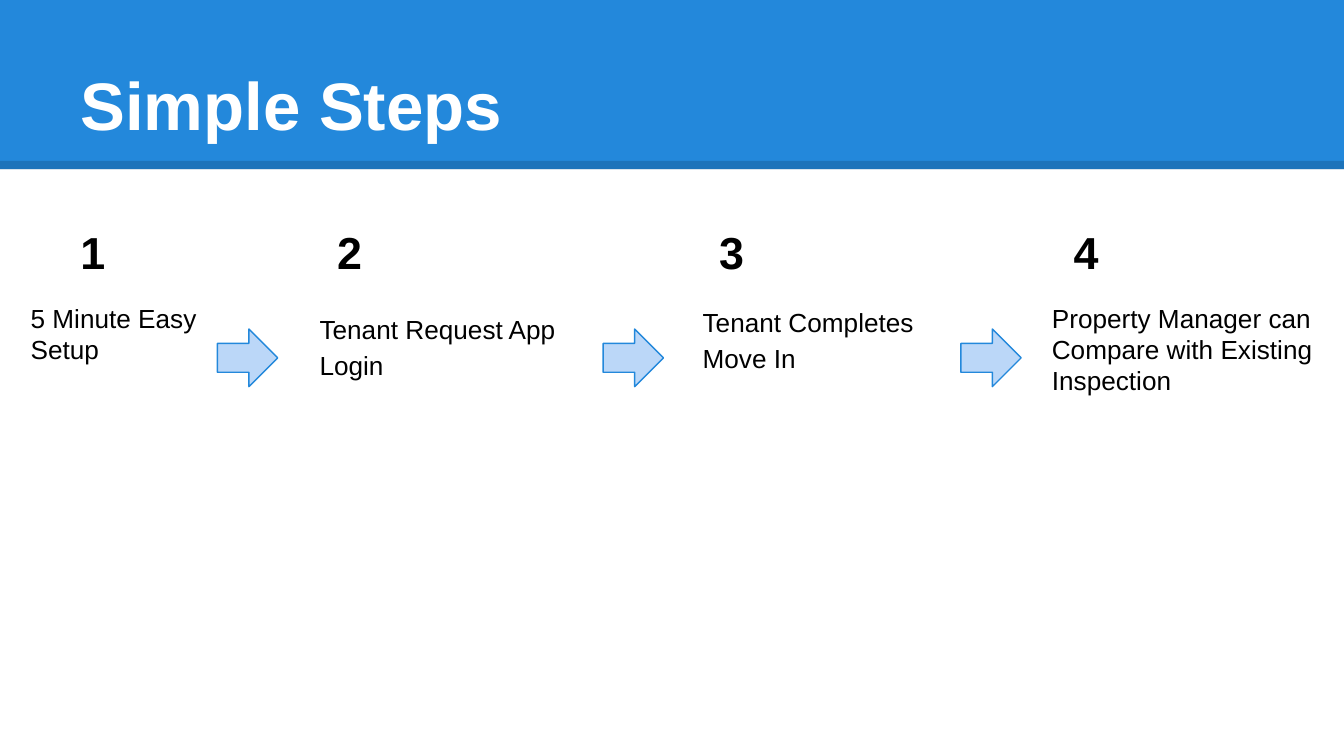
from lxml import etree
from pptx import Presentation
from pptx.dml.color import RGBColor
from pptx.enum.shapes import MSO_CONNECTOR, MSO_SHAPE
from pptx.enum.text import MSO_ANCHOR, MSO_AUTO_SIZE, PP_ALIGN
from pptx.oxml.ns import qn
from pptx.util import Cm, Pt

RECT, ARROW = MSO_SHAPE.RECTANGLE, MSO_SHAPE.RIGHT_ARROW
STRAIGHT = MSO_CONNECTOR.STRAIGHT
TOP, BOTTOM = MSO_ANCHOR.TOP, MSO_ANCHOR.BOTTOM
NO_FIT = MSO_AUTO_SIZE.NONE
LEFT = PP_ALIGN.LEFT

BLUE = RGBColor(0x23, 0x88, 0xDB)
PALE = RGBColor(0xBB, 0xD7, 0xF8)
BLACK = RGBColor(0, 0, 0)
WHITE = RGBColor(255, 255, 255)

WIDTH, HEIGHT = 25.4, 14.29
STEPS = [
    ("1", 1.27, "5 Minute Easy Setup", (0.33, 5.46, 3.96, 1.35), 1),
    ("2", 6.12, "Tenant Request App\nLogin", (5.79, 5.59, 6.22, 1.35), 1.15),
    ("3", 13.34, "Tenant Completes\nMove In", (13.03, 5.46, 5.26, 1.6), 1.15),
    ("4", 20.04, "Property Manager can\nCompare with Existing Inspection",
     (19.63, 5.46, 6.83, 2.08), 1),
]
ARROWS = [4.11, 11.4, 18.16]


class Deck:
    """Holds the style and the current slide."""

    font = "Arial"
    inset = Cm(0.25)

    def __init__(self, prs):
        self.slide = prs.slides.add_slide(prs.slide_layouts[5])
        self.shapes = self.slide.shapes

    def set_text(self, sp, text, size, color=BLACK, bold=False, spacing=1, anchor=TOP):
        tf = sp.text_frame
        tf.text = text
        tf.word_wrap = True
        tf.auto_size = NO_FIT
        tf.vertical_anchor = anchor
        tf.margin_left = tf.margin_right = self.inset
        tf.margin_top = tf.margin_bottom = self.inset
        for p in tf.paragraphs:
            p.alignment = LEFT
            p.line_spacing = spacing
            for r in p.runs:
                r.font.name = self.font
                r.font.size = Pt(size)
                r.font.bold = bold
                r.font.color.rgb = color

    def title(self, text, box):
        sp = self.shapes.title
        sp.left, sp.top, sp.width, sp.height = map(Cm, box)
        self.set_text(sp, text, 36, WHITE, bold=True, anchor=BOTTOM)
        sp.element.getparent().append(sp.element)

    def text(self, text, box, size, **style):
        self.set_text(self.shapes.add_textbox(*map(Cm, box)), text, size, **style)

    def shape(self, kind, box, fill, line=None):
        sp = self.shapes.add_shape(kind, *map(Cm, box))
        sp.shadow.inherit = False
        sp.fill.solid()
        sp.fill.fore_color.rgb = fill
        if line is None:
            sp.line.fill.background()
        else:
            sp.line.color.rgb = line
            sp.line.width = Pt(0.75)

    def rule(self, y, width, color, opacity):
        cn = self.shapes.add_connector(STRAIGHT, 0, Cm(y), Cm(WIDTH), Cm(y))
        cn.line.color.rgb = color
        cn.line.width = Pt(width)
        clr = next(cn.element.iter(qn("a:srgbClr")))
        etree.SubElement(clr, qn("a:alpha")).set("val", str(opacity * 1000))
        etree.SubElement(cn.element.spPr, qn("a:effectLst"))


def main():
    prs = Presentation()
    prs.slide_width, prs.slide_height = Cm(WIDTH), Cm(HEIGHT)
    s = Deck(prs)
    s.shape(RECT, (0, 0, WIDTH, 3.2), BLUE)
    s.rule(3.12, 4.5, BLACK, 15)
    s.title("Simple Steps", (1.27, 0.58, 22.86, 2.39))
    for number, x, label, box, spacing in STEPS:
        s.text(number, (x, 3.99, 1.68, 1.35), 24, bold=True)
        s.text(label, box, 14, spacing=spacing)
    for x in ARROWS:
        s.shape(ARROW, (x, 6.22, 1.14, 1.09), PALE, BLUE)
    prs.save("out.pptx")


if __name__ == "__main__":
    main()
